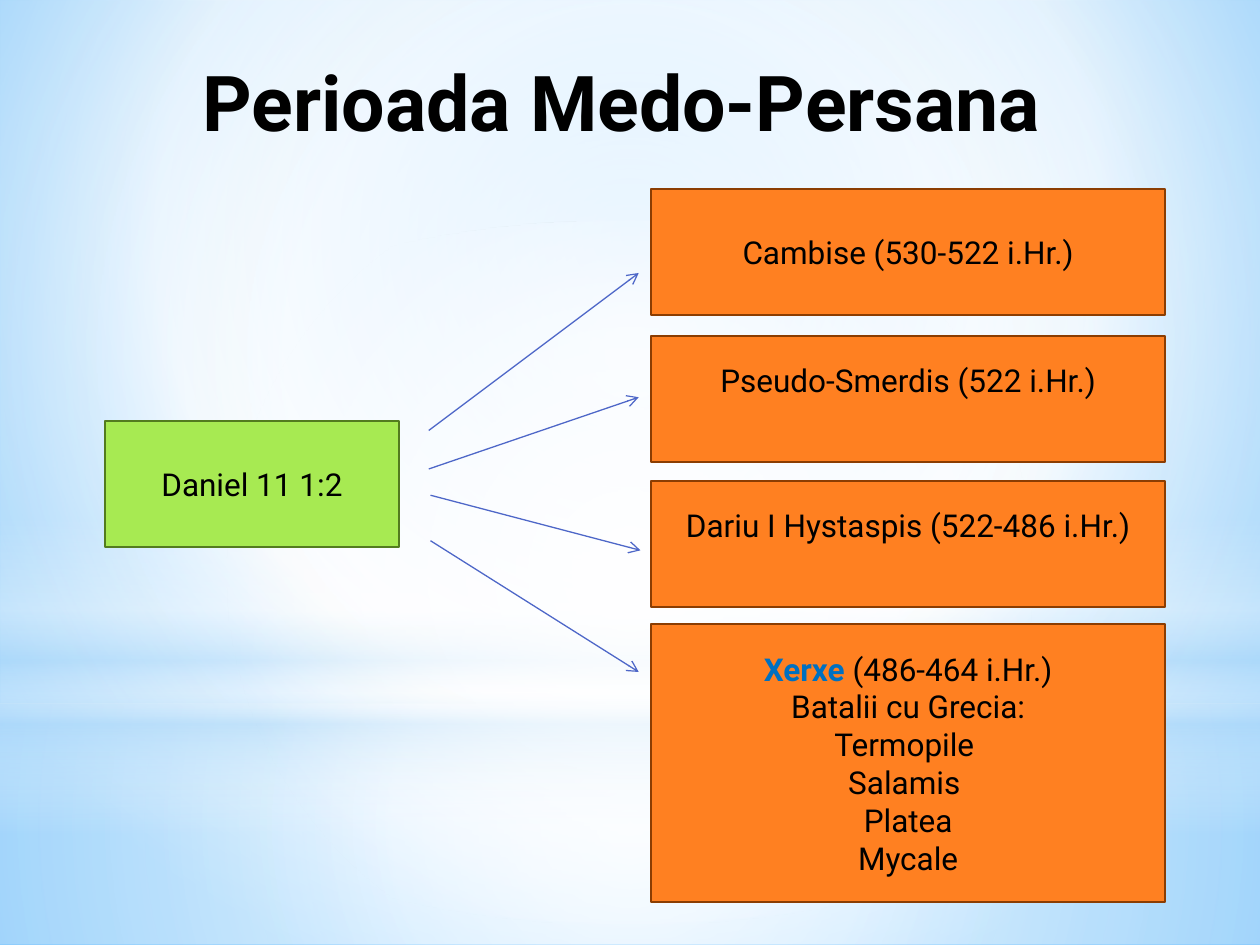
from lxml import etree
from pptx import Presentation
from pptx.dml.color import RGBColor
from pptx.enum.shapes import MSO_CONNECTOR, MSO_SHAPE
from pptx.enum.text import MSO_ANCHOR, PP_ALIGN
from pptx.oxml.ns import qn
from pptx.util import Pt

RECTANGLE, OVAL = MSO_SHAPE.RECTANGLE, MSO_SHAPE.OVAL
STRAIGHT = MSO_CONNECTOR.STRAIGHT
MIDDLE, TOP = MSO_ANCHOR.MIDDLE, MSO_ANCHOR.TOP
CENTER = PP_ALIGN.CENTER

COLORS = {
    "text": "000000", "king": "0070C0", "arrow": "4E67C8",
    "verse": "A7EA52", "verse_edge": "537C1F",
    "ruler": "FF8021", "ruler_edge": "8B3D02",
    "white": "FFFFFF", "mist": "B4DCFA", "sky": "9ED5FF", "deep": "5BB9FF",
}
FONT = "Roboto"
WIDTH, HEIGHT = 720, 540
HORIZON = 402

BACKDROP = ([(0, "sky", 100), (60, "white", 100), (100, "deep", 100)], (20, 10, 20, 60))
MIDPOINT = (50, 50, 50, 50)
GLOWS = [
    (RECTANGLE, (0, HORIZON, WIDTH, HEIGHT - HORIZON),
     [(0, "white", 91), (37, "white", 76), (100, "mist", 79)], MIDPOINT),
    (RECTANGLE, (0, 0, WIDTH, HORIZON),
     [(0, "white", 89), (48, "white", 62), (100, "mist", 79)], MIDPOINT),
    (RECTANGLE, (0, 296.5, WIDTH, 180),
     [(0, "white", 0), (29, "white", 30), (45, "mist", 40),
      (55, "white", 26), (65, "mist", 60), (100, "white", 0)], None),
    (OVAL, (0, 126, WIDTH, HORIZON), [(0, "white", 100), (56, "white", 0)], MIDPOINT),
]

TITLE = "Perioada Medo-Persana"
VERSE = "Daniel 11 1:2"
RULER_LEFT, RULER_WIDTH, BOX_HEIGHT = 372, 294, 72
LINE_HEIGHT = 21.6
RULERS = [
    (108, BOX_HEIGHT, 0, [[("Cambise (530-522 i.Hr.)", "text", False)]]),
    (192, BOX_HEIGHT, LINE_HEIGHT, [[("Pseudo-Smerdis (522 i.Hr.)", "text", False)]]),
    (275, BOX_HEIGHT, LINE_HEIGHT, [[("Dariu I Hystaspis (522-486 i.Hr.)", "text", False)]]),
    (356.5, 159, 0,
     [[("Xerxe ", "king", True), ("(486-464 i.Hr.)", "text", False)]]
     + [[(line, "text", False)] for line in
        ("Batalii cu Grecia:", "Termopile ", "Salamis ", "Platea", "Mycale")]),
]
ARROWS = [
    (245, 246, 365, 156), (245, 268, 365, 227),
    (246, 283, 366, 314.5), (246, 309, 365, 384),
]


def color(name):
    return RGBColor.from_string(COLORS[name])


def paint_gradient(fill, element, stops, focus):
    fill.gradient()
    gradient = next(element.iter(qn("a:gradFill")))
    for child in list(gradient):
        gradient.remove(child)
    stop_list = etree.SubElement(gradient, qn("a:gsLst"))
    for position, name, opacity in stops:
        stop = etree.SubElement(stop_list, qn("a:gs"), pos=str(position * 1000))
        tint = etree.SubElement(stop, qn("a:srgbClr"), val=COLORS[name])
        if opacity < 100:
            etree.SubElement(tint, qn("a:alpha"), val=str(opacity * 1000))
    if focus:
        shade = etree.SubElement(gradient, qn("a:path"), {"path": "circle"})
        edges = {side: str(value * 1000) for side, value in zip("ltrb", focus)}
        etree.SubElement(shade, qn("a:fillToRect"), edges)
    else:
        etree.SubElement(gradient, qn("a:lin"), ang="5400000", scaled="0")


def write(shape, lines, size, frame_format):
    frame = shape.text_frame
    for name, value in {"word_wrap": True, **frame_format}.items():
        setattr(frame, name, value)
    for index, spans in enumerate(lines):
        para = frame.paragraphs[0] if index == 0 else frame.add_paragraph()
        para.alignment = CENTER
        for text, tone, bold in spans:
            span = para.add_run()
            span.text = text
            for name, value in {"name": FONT, "size": Pt(size), "bold": bold}.items():
                setattr(span.font, name, value)
            span.font.color.rgb = color(tone)


def add_box(page, place, tone, lines, extra_bottom=0):
    box = page.shapes.add_shape(RECTANGLE, *map(Pt, place))
    box.shadow.inherit = False
    box.fill.solid()
    box.fill.fore_color.rgb = color(tone)
    box.line.color.rgb = color(tone + "_edge")
    box.line.width = Pt(1.25)
    write(box, lines, 18, {"vertical_anchor": MIDDLE, "margin_bottom": Pt(3.6 + extra_bottom)})


def add_arrow(page, ends):
    arrow = page.shapes.add_connector(STRAIGHT, *map(Pt, ends))
    arrow.line.color.rgb = color("arrow")
    arrow.line.width = Pt(0.75)
    etree.SubElement(arrow.line._get_or_add_ln(), qn("a:tailEnd"), type="arrow")
    etree.SubElement(arrow.element.spPr, qn("a:effectLst"))


def main():
    deck = Presentation()
    deck.slide_width, deck.slide_height = Pt(WIDTH), Pt(HEIGHT)
    page = deck.slides.add_slide(deck.slide_layouts[6])
    paint_gradient(page.background.fill, page.element, *BACKDROP)
    for kind, place, stops, focus in GLOWS:
        glow = page.shapes.add_shape(kind, *map(Pt, place))
        glow.shadow.inherit = False
        glow.line.fill.background()
        paint_gradient(glow.fill, glow.element, stops, focus)

    add_box(page, (60, 240.5, 168, BOX_HEIGHT), "verse", [[(VERSE, "text", False)]])
    for top, height, extra_bottom, lines in RULERS:
        add_box(page, (RULER_LEFT, top, RULER_WIDTH, height), "ruler", lines, extra_bottom)
    for ends in ARROWS:
        add_arrow(page, ends)

    title = page.shapes.add_textbox(Pt(15), Pt(24), Pt(666), Pt(72))
    write(title, [[(TITLE, "text", True)]], 44,
          {"vertical_anchor": TOP, "margin_left": Pt(21.6), "margin_top": Pt(7)})
    deck.save("out.pptx")


if __name__ == "__main__":
    main()
